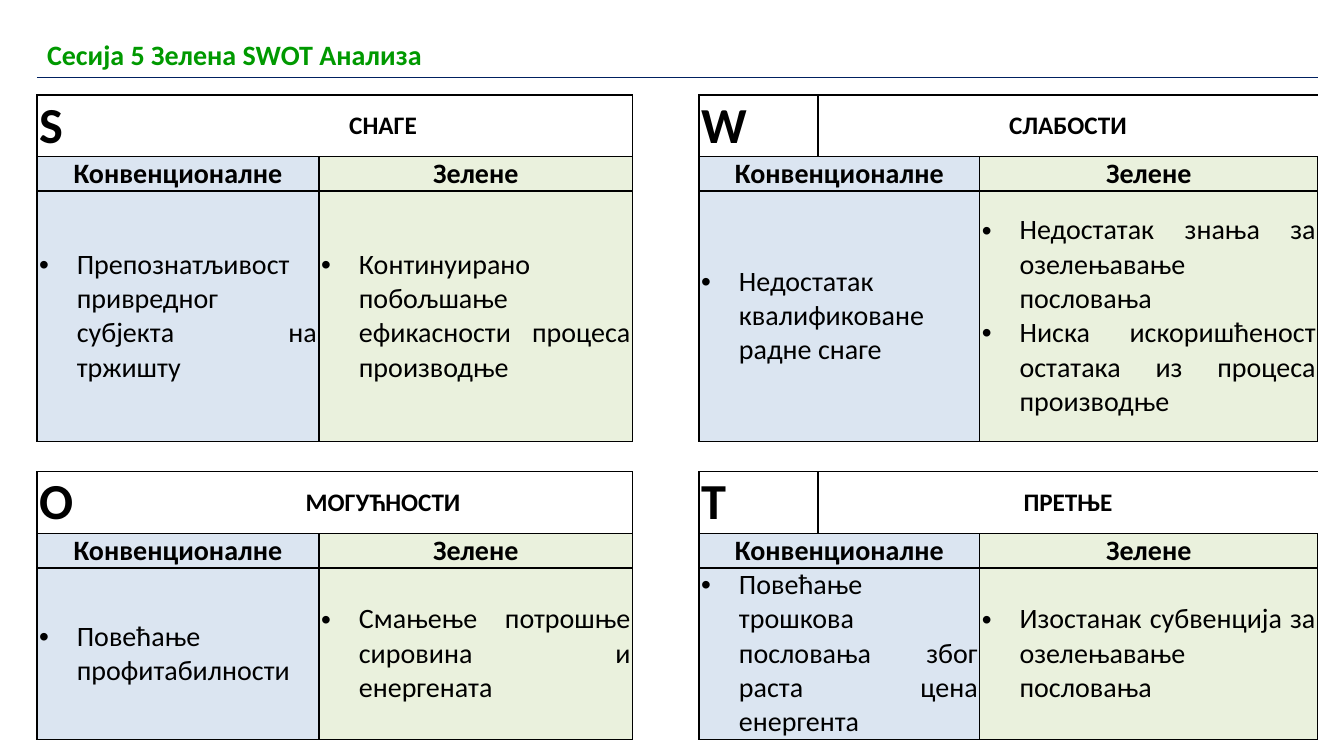
"""Build the green SWOT analysis slide."""
from lxml.etree import SubElement
from pptx import Presentation
from pptx.dml.color import RGBColor
from pptx.enum.text import MSO_ANCHOR, PP_ALIGN
from pptx.oxml.ns import qn
from pptx.util import Pt

BLUE, GREEN = "DBE5F1", "EAF1DD"
PLAIN = "{2D5ABB26-0587-4C30-8999-92F81FD0307C}"


def edge(cell, sides, tone="000000"):
    """Draw a one-point line on each named side."""
    props = cell._tc.get_or_add_tcPr()
    for side in sides:
        line = SubElement(props, qn(f"a:ln{side}"), w=str(Pt(1)))
        fill = SubElement(line, qn("a:solidFill"))
        SubElement(fill, qn("a:srgbClr"), val=tone)


def put(cell, text, size=20, bold=True, tone="000000", fill=None,
        align=PP_ALIGN.CENTER, anchor=MSO_ANCHOR.MIDDLE, bullet=False):
    """Write formatted text into a cell, one paragraph a line."""
    cell.text = text
    cell.vertical_anchor = anchor
    if fill:
        cell.fill.solid()
        cell.fill.fore_color.rgb = RGBColor.from_string(fill)
    for para in cell.text_frame.paragraphs:
        para.alignment = align
        font = para.runs[0].font
        font.name, font.size, font.bold = "Calibri", Pt(size), bold
        font.color.rgb = RGBColor.from_string(tone)
        if bullet:
            props = para._p.get_or_add_pPr()
            props.set("marL", str(Pt(27)))
            props.set("indent", str(-Pt(27)))
            SubElement(props, qn("a:buFont"), typeface="Arial")
            SubElement(props, qn("a:buChar"), char="•")


deck = Presentation()
deck.slide_width, deck.slide_height = Pt(960), Pt(540)
slide = deck.slides.add_slide(deck.slide_layouts[6])

wide = [69, 132.5, 224, 47.5, 85, 115.5, 241.5]
high = [43.9, 24.4, 178.6, 22, 43.9, 24.4, 122]
frame = slide.shapes.add_table(7, 7, Pt(26.4), Pt(67.9), Pt(sum(wide)), Pt(sum(high)))
swot = frame.table
head = slide.shapes.add_table(1, 1, Pt(26.4), Pt(23.8), Pt(sum(wide)), Pt(31.6)).table

for table in (swot, head):
    table.first_row = table.horz_banding = False
    table._tbl.tblPr.find(qn("a:tableStyleId")).text = PLAIN
for col, width in zip(swot.columns, wide):
    col.width = Pt(width)
for row, height in zip(swot.rows, high):
    row.height = Pt(height)
for cell in swot.iter_cells():
    cell.margin_left = cell.margin_right = Pt(1.5)
    cell.margin_top = cell.margin_bottom = 0

parts = [
    (0, 0, "S", "СНАГЕ", "Препознатљивост привредног субјекта на тржишту",
     "Континуирано побољшање ефикасности процеса производње"),
    (0, 4, "W", "СЛАБОСТИ", "Недостатак квалификоване радне снаге",
     "Недостатак знања за озелењавање пословања\n"
     "Ниска искоришћеност остатака из процеса производње"),
    (4, 0, "О", "МОГУЋНОСТИ", "Повећање профитабилности",
     "Смањење потрошње сировина и енергената"),
    (4, 4, "Т", "ПРЕТЊЕ", "Повећање трошкова пословања због раста цена енергента",
     "Изостанак субвенција за озелењавање пословања"),
]
for top, left, mark, name, usual, green in parts:
    letter, title = swot.cell(top, left), swot.cell(top, left + 1)
    title.merge(swot.cell(top, left + 2))
    edge(letter, "LTB")
    edge(title, "TB" if left else "RTB")
    put(letter, mark, size=36, align=PP_ALIGN.JUSTIFY)
    put(title, name, size=18)
    sides = [(left, "Конвенционалне", usual, BLUE), (left + 2, "Зелене", green, GREEN)]
    for col, label, points, fill in sides:
        kind, body = swot.cell(top + 1, col), swot.cell(top + 2, col)
        if col == left:
            kind.merge(swot.cell(top + 1, col + 1))
            body.merge(swot.cell(top + 2, col + 1))
        edge(kind, "LRT")
        edge(body, "LRB")
        put(kind, label, fill=fill, anchor=MSO_ANCHOR.TOP)
        put(body, points, bold=False, fill=fill, align=PP_ALIGN.JUSTIFY, bullet=True)

edge(head.cell(0, 0), "B", "002060")
put(head.cell(0, 0), "Сесија 5 Зелена SWOT Анализа", tone="009900",
    align=PP_ALIGN.LEFT, anchor=MSO_ANCHOR.TOP)

deck.save("out.pptx")
